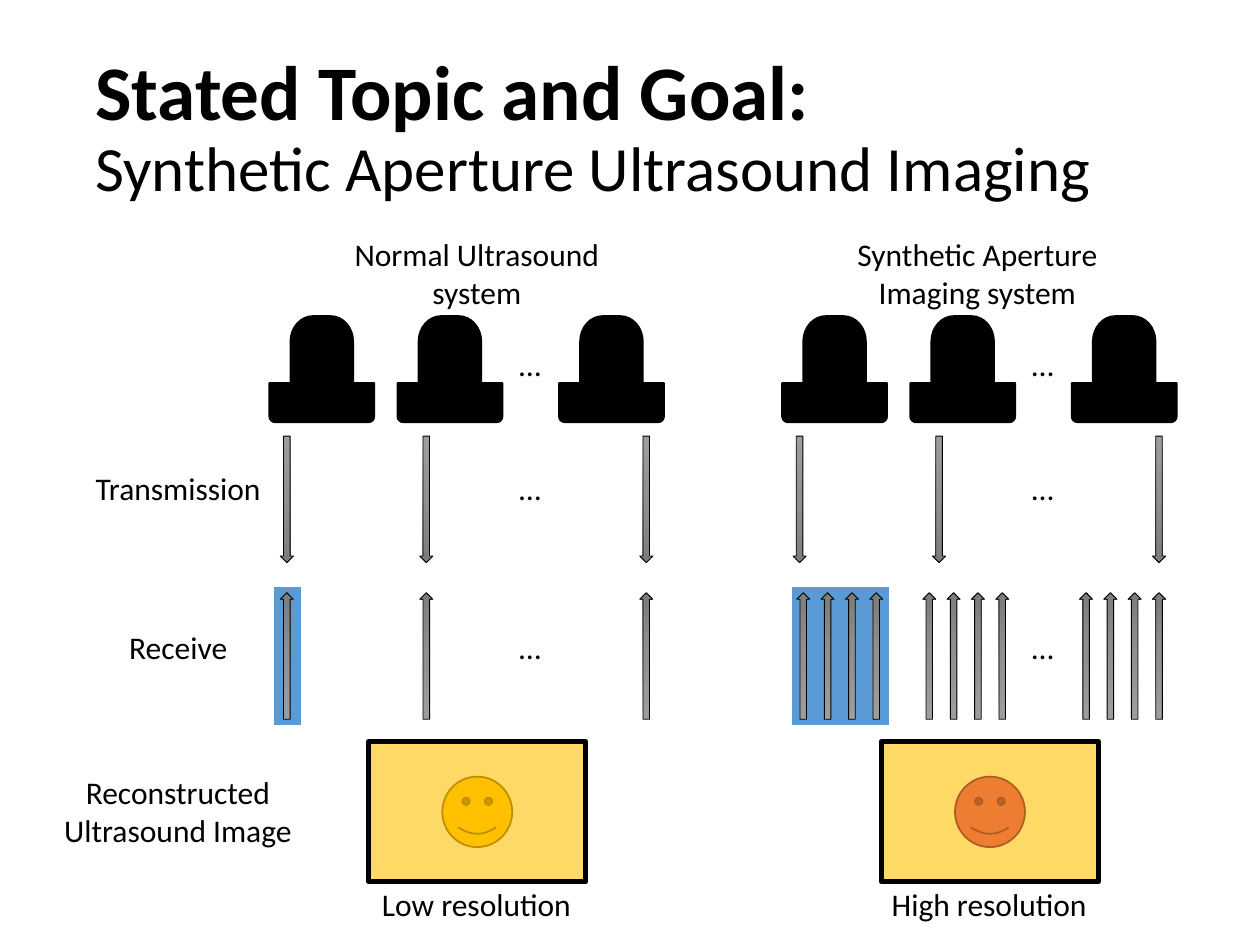
import copy
from dataclasses import dataclass

import pptx
import pptx.dml.color
import pptx.enum.shapes
import pptx.enum.text
import pptx.oxml.ns
import pptx.util

Pt = pptx.util.Pt
qn = pptx.oxml.ns.qn
SHAPE = pptx.enum.shapes.MSO_SHAPE
ALIGN = pptx.enum.text.PP_ALIGN

# Transducer outline in points: one point is a line, three are a Bezier curve.
PROBE_START = (25, 0)
PROBE_SEGMENTS = [
    [(35, 0)],
    [(42.1, 0), (47.9, 6.5), (47.9, 14.5)],
    [(47.9, 38.3)],
    [(60, 38.3)],
    [(60, 57.4)],
    [(60, 59.2), (58.5, 60.7), (56.7, 60.7)],
    [(3.3, 60.7)],
    [(1.5, 60.7), (0, 59.2), (0, 57.4)],
    [(0, 38.3)],
    [(12.1, 38.3)],
    [(12.1, 14.5)],
    [(12.1, 6.5), (17.9, 0), PROBE_START],
]


@dataclass(frozen=True)
class Theme:
    font: str = "Calibri"
    title: float = 44.1
    subtitle: float = 36
    body: float = 18
    black: str = "000000"
    white: str = "FFFFFF"
    highlight: str = "5B9BD5"
    screen: str = "FFD966"
    low_face: tuple = ("FFC000", "BD8E00")
    high_face: tuple = ("ED7D31", "AF5C24")
    arrow: tuple = ("9D9D9D", "909090", "7C7C7C")


def rgb(value):
    return pptx.dml.color.RGBColor.from_string(value)


class SlideBuilder:
    def __init__(self, slide, theme):
        self.s = slide
        self.theme = theme

    def finish(self, sp, fill, line, width):
        sp.shadow.inherit = False
        if fill:
            sp.fill.solid()
            sp.fill.fore_color.rgb = rgb(fill)
        sp.line.color.rgb = rgb(line)
        sp.line.width = Pt(width)

    def shape(self, kind, x, y, w, h, fill, line, width):
        sp = self.s.shapes.add_shape(kind, Pt(x), Pt(y), Pt(w), Pt(h))
        self.finish(sp, fill, line, width)
        return sp

    def arrow(self, center, y, up=False):
        sp = self.shape(SHAPE.DOWN_ARROW, center - 3.75, y, 7.5, 72.3,
                        None, self.theme.black, 0.5)
        sp.fill.gradient()
        sp.fill.gradient_angle = 270
        first = next(sp._element.iter(qn("a:gs")))
        middle = copy.deepcopy(first)
        middle.set("pos", "50000")
        first.addnext(middle)
        for stop, color in zip(sp.fill.gradient_stops, self.theme.arrow):
            stop.color.rgb = rgb(color)
        sp.rotation = 180 if up else 0

    def probe(self, x, y):
        """Domed body on a wider base with rounded bottom corners."""
        def place(point):
            return Pt(x + point[0]), Pt(y + point[1])

        builder = self.s.shapes.build_freeform(*place(PROBE_START), scale=1.0)
        builder.add_line_segments(
            [place(point) for segment in PROBE_SEGMENTS for point in segment])
        sp = builder.convert_to_shape()
        lines = iter(list(sp._element.iter(qn("a:lnTo"))))
        for segment in PROBE_SEGMENTS:
            curve = next(lines)
            if len(segment) == 3:
                curve.tag = qn("a:cubicBezTo")
                for extra in (next(lines), next(lines)):
                    curve.append(extra[0])
                    extra.getparent().remove(extra)
        self.finish(sp, self.theme.black, self.theme.black, 1)

    def text(self, text, x, y, w, h, align=ALIGN.CENTER, wrap=False):
        tb = self.s.shapes.add_textbox(Pt(x), Pt(y), Pt(w), Pt(h))
        tf = tb.text_frame
        tf.text = text
        tf.word_wrap = wrap
        tf.auto_size = pptx.enum.text.MSO_AUTO_SIZE.SHAPE_TO_FIT_TEXT
        for p in tf.paragraphs:
            p.alignment = align
            for r in p.runs:
                r.font.name = self.theme.font
                r.font.size = Pt(self.theme.body)
                r.font.color.rgb = rgb(self.theme.black)
        return tf

    def title(self, heading, subtitle):
        tf = self.text(f"{heading}\v{subtitle}", 47.3, 21.6, 620.6, 104.4,
                       ALIGN.LEFT, wrap=True)
        tf.auto_size = pptx.enum.text.MSO_AUTO_SIZE.NONE
        tf.vertical_anchor = pptx.enum.text.MSO_ANCHOR.MIDDLE
        p = tf.paragraphs[0]
        p.line_spacing = 0.9
        top, bottom = p.runs
        top.font.size, top.font.bold = Pt(self.theme.title), True
        bottom.font.size = Pt(self.theme.subtitle)

    def system(self, dx, heading, heading_x, caption, caption_w, face,
               receive_groups, highlight):
        """One imaging system, shifted right by dx."""
        theme = self.theme
        left, width = highlight
        self.shape(SHAPE.RECTANGLE, dx + left, 334.8, width, 80.3,
                   theme.highlight, theme.white, 1.5)
        self.text(heading, heading_x, 130.6, 155, 51, wrap=True)
        for x in (153.9, 227.1, 319.4):
            self.probe(dx + x, 180.6)
        for center in (163.9, 243.6, 369.3):
            self.arrow(dx + center, 249.2)
        for group in receive_groups:
            for center in group:
                self.arrow(dx + center, 338.7, up=True)
        for y in (193.7, 264.5, 355.4):
            self.text("…", dx + 289.6, y, 27.4, 28.8, ALIGN.LEFT)
        self.shape(SHAPE.RECTANGLE, dx + 210.7, 423.8, 124, 80,
                   theme.screen, theme.black, 3)
        self.shape(SHAPE.SMILEY_FACE, dx + 252.7, 443.8, 40, 40.3, *face, 1)
        self.text(caption, dx + 272.3 - caption_w / 2, 502.3, caption_w, 28.8)


def main():
    prs = pptx.Presentation()
    prs.slide_width, prs.slide_height = Pt(720), Pt(540)
    theme = Theme()
    slide = SlideBuilder(prs.slides.add_slide(prs.slide_layouts[6]), theme)

    slide.title("Stated Topic and Goal:", "Synthetic Aperture Ultrasound Imaging")
    single = [[163.9], [243.6], [369.3]]
    fans = [[first + 13.9 * i for i in range(4)] for first in (166, 238, 327.6)]
    slide.system(0, "Normal Ultrasound system", 195, "Low resolution", 123.8,
                 theme.low_face, single, (155.7, 16.8))
    slide.system(293, "Synthetic Aperture Imaging system", 481, "High resolution",
                 127.4, theme.high_face, fans, (158.7, 57))

    for label, x, y, w, h in (
        ("Transmission", 47, 264.5, 109.5, 28.8),
        ("Receive", 66.2, 355.4, 71.3, 28.8),
        ("Reconstructed\nUltrasound Image", 28.6, 438.4, 146.2, 51),
    ):
        slide.text(label, x, y, w, h)

    prs.save("out.pptx")


if __name__ == "__main__":
    main()
